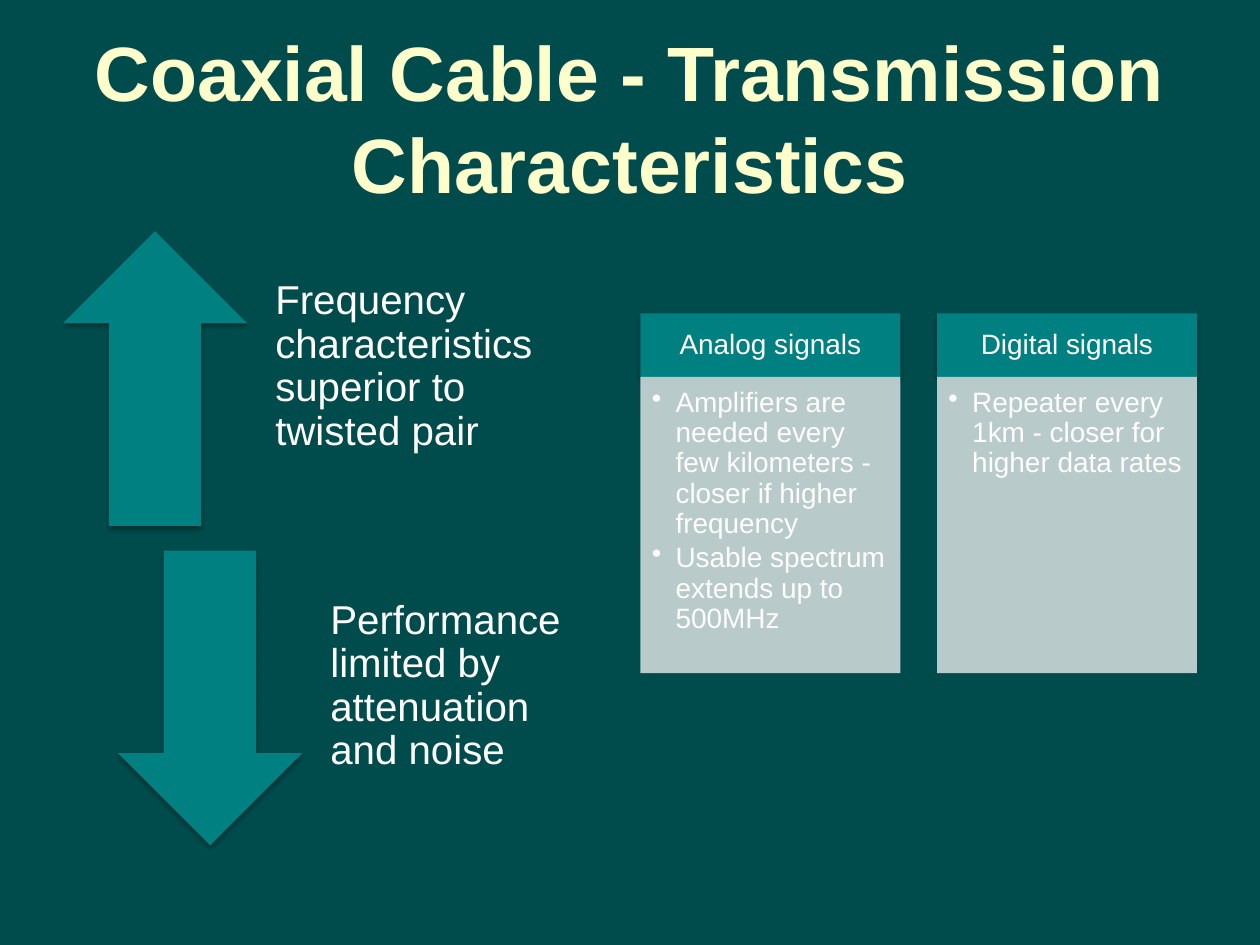
from dataclasses import dataclass

from lxml.etree import SubElement
from pptx import Presentation
from pptx.dml.color import RGBColor as Rgb
from pptx.enum.shapes import MSO_SHAPE as Shape
from pptx.enum.text import MSO_ANCHOR as Anchor, MSO_AUTO_SIZE as AutoSize, PP_ALIGN as Align
from pptx.oxml.ns import qn
from pptx.util import Cm, Pt


@dataclass(frozen=True)
class Theme:
    font: str = "Arial"
    background: str = "004C4D"
    title: str = "FFFFCC"
    accent: str = "008080"
    panel: str = "CCD8D8"
    text: str = "FFFFFF"
    title_size: int = 44
    point_size: int = 23
    card_size: int = 16


class SlideBuilder:
    """Holds the theme and the current slide."""

    def __init__(self, deck, theme):
        self.theme = theme
        self.page = deck.slides.add_slide(deck.slide_layouts[5])
        fill = self.page.background.fill
        fill.solid()
        fill.fore_color.rgb = Rgb.from_string(theme.background)

    def set_text(self, box, texts, size, color, margins, anchor, align=Align.LEFT,
                 spacing=0.9, bold=False, bullets=False):
        frame = box.text_frame
        sides = ("margin_left", "margin_top", "margin_right", "margin_bottom")
        frame_format = {"word_wrap": True, "auto_size": AutoSize.NONE,
                        "vertical_anchor": anchor}
        frame_format.update(zip(sides, map(Cm, margins)))
        for name, value in frame_format.items():
            setattr(frame, name, value)
        for index, text in enumerate(texts):
            para = frame.add_paragraph() if index else frame.paragraphs[0]
            para.alignment = align
            para.line_spacing = spacing
            span = para.add_run()
            span.text = text
            font_format = {"name": self.theme.font, "size": Pt(size), "bold": bold}
            for name, value in font_format.items():
                setattr(span.font, name, value)
            span.font.color.rgb = Rgb.from_string(color)
            if bullets:
                para.space_after = Pt(2.4)
                self.add_bullet(para)

    def add_bullet(self, para):
        props = para._p.get_or_add_pPr()
        indent = Cm(0.48)
        props.set("marL", str(indent))
        props.set("indent", str(-indent))
        SubElement(props, qn("a:buChar"), char="•")

    def add_title(self, text, left, top, width, height):
        title = self.page.shapes.title
        place = {"left": left, "top": top, "width": width, "height": height}
        for name, value in place.items():
            setattr(title, name, Cm(value))
        self.set_text(title, [text], self.theme.title_size, self.theme.title,
                      (0.25, 0.13, 0.25, 0.13), Anchor.MIDDLE, Align.CENTER,
                      spacing=1.0, bold=True)

    def add_block(self, kind, color, *place, shadow=False, opacity=None):
        block = self.page.shapes.add_shape(kind, *map(Cm, place))
        block.shadow.inherit = False
        block.fill.solid()
        block.fill.fore_color.rgb = Rgb.from_string(color)
        block.line.fill.background()
        if opacity:
            tint = block._element.spPr.find(qn("a:solidFill"))[0]
            SubElement(tint, qn("a:alpha"), val=str(opacity * 1000))
        if shadow:
            self.add_shadow(block)
        return block

    def add_shadow(self, block):
        effects = block._element.spPr.find(qn("a:effectLst"))
        outer = SubElement(effects, qn("a:outerShdw"), blurRad=str(Pt(3.1)),
                           dist=str(Pt(1.8)), dir="5400000", rotWithShape="0")
        tint = SubElement(outer, qn("a:srgbClr"), val="000000")
        SubElement(tint, qn("a:alpha"), val="35000")

    def add_point(self, kind, text, left, top):
        arrow_width, height, text_offset, text_width = 3.71, 5.94, 3.82, 6.27
        self.add_block(kind, self.theme.accent, left, top, arrow_width, height, shadow=True)
        box = self.page.shapes.add_textbox(
            *map(Cm, (left + text_offset, top, text_width, height)))
        self.set_text(box, [text], self.theme.point_size, self.theme.text,
                      (0.46, 0, 0.46, 0.46), Anchor.MIDDLE)

    def add_card(self, heading, items, left, top):
        width, head_height, body_height = 5.24, 1.28, 5.97
        theme = self.theme
        head = self.add_block(Shape.RECTANGLE, theme.accent, left, top, width,
                              head_height, shadow=True)
        self.set_text(head, [heading], theme.card_size, theme.text,
                      (0.3, 0.18, 0.3, 0.18), Anchor.MIDDLE, Align.CENTER)
        body = self.add_block(Shape.RECTANGLE, theme.panel, left, top + head_height,
                              width, body_height, opacity=90)
        self.set_text(body, items, theme.card_size, theme.text,
                      (0.23, 0.23, 0.3, 0.36), Anchor.TOP, bullets=True)


def main():
    deck = Presentation()
    deck.slide_width, deck.slide_height = Cm(25.4), Cm(19.05)
    builder = SlideBuilder(deck, Theme())

    builder.add_title("Coaxial Cable - Transmission Characteristics",
                      1.27, 0.76, 22.86, 3.18)

    # Arrows with their points, stepped to the right
    points = [
        (Shape.UP_ARROW, "Frequency characteristics superior to twisted pair"),
        (Shape.DOWN_ARROW, "Performance limited by attenuation and noise"),
    ]
    for index, (kind, text) in enumerate(points):
        builder.add_point(kind, text, 1.27 + index * 1.11, 4.66 + index * 6.44)

    # Signal cards side by side
    cards = [
        ("Analog signals",
         ["Amplifiers are needed every few kilometers - closer if higher frequency",
          "Usable spectrum extends up to 500MHz"]),
        ("Digital signals",
         ["Repeater every 1km - closer for higher data rates"]),
    ]
    for index, (heading, items) in enumerate(cards):
        builder.add_card(heading, items, 12.91 + index * 5.98, 6.32)

    deck.save("out.pptx")


if __name__ == "__main__":
    main()
